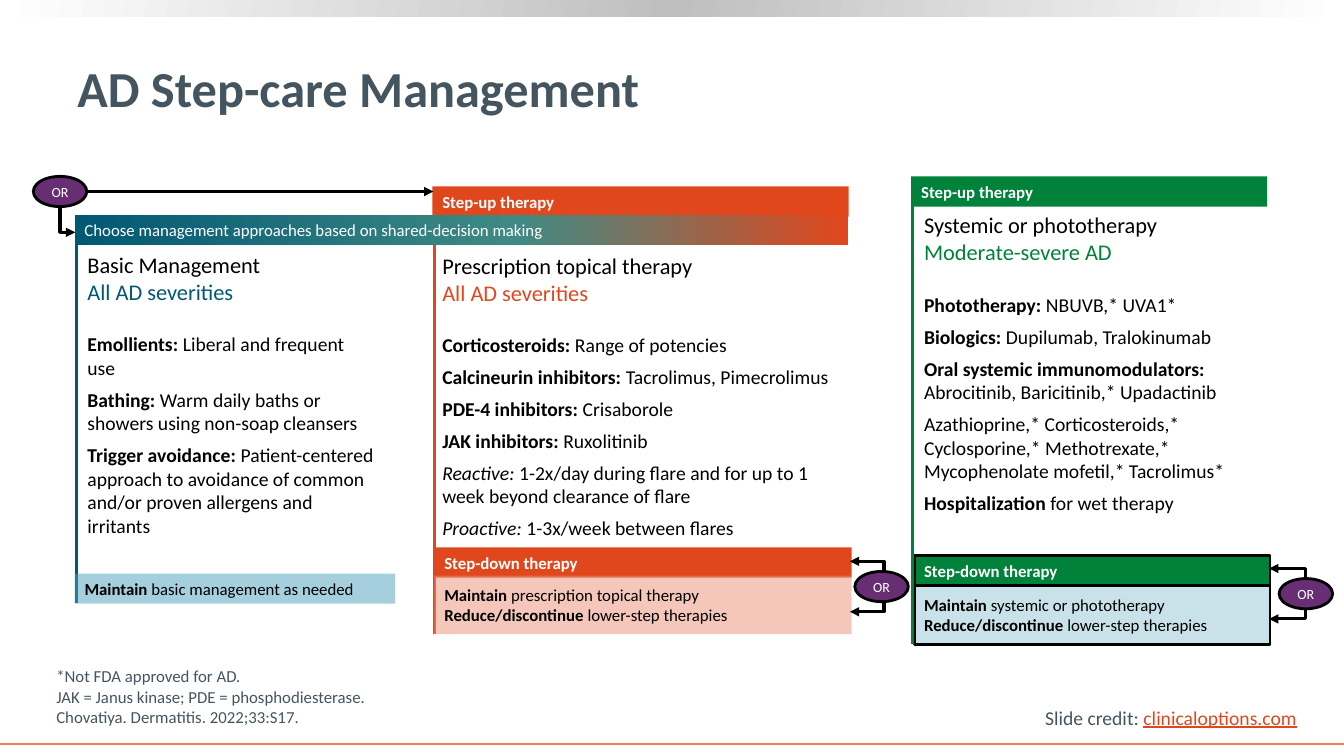
from copy import deepcopy
from dataclasses import dataclass

from pptx import Presentation
from pptx.dml.color import RGBColor
from pptx.enum.shapes import MSO_CONNECTOR as Link, MSO_SHAPE as Preset
from pptx.enum.text import MSO_ANCHOR as Anchor, PP_ALIGN as Align
from pptx.oxml.ns import qn
from pptx.oxml.xmlchemy import OxmlElement
from pptx.util import Pt

COLORS = {
    "white": "FFFFFF", "black": "000000", "silver": "BFBFBF", "slate": "455560",
    "orange": "E1471D", "coral": "F47D55", "pink": "ED9077", "green": "00823B",
    "navy": "015873", "teal": "3F8A84", "sky": "4DA1BB", "ice": "94C7D6",
    "purple": "682E74",
}
BAR_HEIGHT = 21.6
NOTE_HEIGHT = 41.8
HEADING_GAP = 19.5


@dataclass(frozen=True)
class Run:
    text: str
    color: str = "black"
    bold: bool = False
    italic: bool = False
    underline: bool = False
    size: float = 12


@dataclass(frozen=True)
class Box:
    left: float
    top: float
    width: float
    height: float


@dataclass(frozen=True)
class Column:
    box: Box
    heading: str
    severity: str
    color: str
    items: list[list[Run]]


@dataclass(frozen=True)
class Loop:
    left: float
    top: float
    width: float
    badge: Box


def rgb(name: str) -> RGBColor:
    return RGBColor.from_string(COLORS[name])


def item(label: str, text: str, size: float = 14, italic: bool = False) -> list[Run]:
    return [Run(label, bold=not italic, italic=italic, size=size), Run(text, size=size)]


def place(box: Box) -> tuple:
    return Pt(box.left), Pt(box.top), Pt(box.width), Pt(box.height)


def write(frame, paragraphs: list[list[Run]], **formats) -> None:
    """Fill a text frame; a run that starts with a newline follows a line break."""
    for name, value in ({"word_wrap": True} | formats).items():
        setattr(frame, name, value)
    for index, runs in enumerate(paragraphs):
        paragraph = frame.paragraphs[0] if index == 0 else frame.add_paragraph()
        paragraph.alignment = Align.LEFT
        for part in runs:
            if part.text.startswith("\n"):
                paragraph.add_line_break()
            run = paragraph.add_run()
            run.text = part.text.lstrip("\n")
            font_values = {"name": "Calibri", "size": Pt(part.size), "bold": part.bold,
                           "italic": part.italic, "underline": part.underline}
            for name, value in font_values.items():
                setattr(run.font, name, value)
            run.font.color.rgb = rgb(part.color)


def add_text(slide, box: Box, paragraphs: list[list[Run]], **formats):
    frame = slide.shapes.add_textbox(*place(box)).text_frame
    write(frame, paragraphs, **formats)
    return frame


def add_bar(slide, box: Box, fill: str, paragraphs: list[list[Run]], outlined: bool = False,
            opacity: int = 100, preset=Preset.RECTANGLE):
    shape = slide.shapes.add_shape(preset, *place(box))
    shape.shadow.inherit = False
    shape.fill.solid()
    shape.fill.fore_color.rgb = rgb(fill)
    if opacity < 100:
        alpha = OxmlElement("a:alpha")
        alpha.set("val", str(opacity * 1000))
        shape._element.spPr.find(".//" + qn("a:srgbClr")).append(alpha)
    if outlined:
        shape.line.color.rgb = rgb("black")
        shape.line.width = Pt(2)
    else:
        shape.line.fill.background()
    write(shape.text_frame, paragraphs, vertical_anchor=Anchor.MIDDLE)
    return shape


def set_gradient(shape, stops: list[tuple[float, str]], angle: float) -> None:
    shape.fill.gradient()
    shape.fill.gradient_angle = angle
    stop_list = shape._element.spPr.find(".//" + qn("a:gsLst"))
    stop_list.append(deepcopy(stop_list[0]))
    for stop, (position, color) in zip(shape.fill.gradient_stops, stops):
        stop.position = position
        stop.color.rgb = rgb(color)


def style_line(shape, color: str, width: float = 2.25, arrows: tuple[str, ...] = ()) -> None:
    shape.line.color.rgb = rgb(color)
    shape.line.width = Pt(width)
    for end in arrows:
        arrow = OxmlElement(f"a:{end}")
        arrow.set("type", "triangle")
        shape.line._get_or_add_ln().append(arrow)


def add_line(slide, x1: float, y1: float, x2: float, y2: float, color: str,
             width: float = 2.25, arrows: tuple[str, ...] = (), kind=Link.STRAIGHT):
    line = slide.shapes.add_connector(kind, Pt(x1), Pt(y1), Pt(x2), Pt(y2))
    style_line(line, color, width, arrows)
    line._element.spPr.append(OxmlElement("a:effectLst"))
    return line


def add_badge(slide, box: Box) -> None:
    badge = add_bar(slide, box, "purple", [[Run("OR", "white", size=10)]],
                    outlined=True, preset=Preset.OVAL)
    frame = badge.text_frame
    frame.margin_left = frame.margin_right = 0
    frame.paragraphs[0].alignment = Align.CENTER


def add_loop(slide, loop: Loop) -> None:
    right, bottom = loop.left + loop.width, loop.top + 36
    builder = slide.shapes.build_freeform(Pt(loop.left), Pt(loop.top))
    builder.add_line_segments([(Pt(right), Pt(loop.top)), (Pt(right), Pt(bottom)),
                               (Pt(loop.left), Pt(bottom))], close=False)
    shape = builder.convert_to_shape()
    shape.shadow.inherit = False
    shape.fill.background()
    style_line(shape, "black", arrows=("headEnd", "tailEnd"))
    add_badge(slide, loop.badge)


def add_column(slide, column: Column) -> None:
    heading = [Run(column.heading, size=16), Run("\n" + column.severity, column.color, size=16)]
    frame = add_text(slide, column.box, [heading] + column.items)
    for paragraph in frame.paragraphs[1:]:
        paragraph.space_after = Pt(6)
    frame.paragraphs[1].space_before = Pt(HEADING_GAP)


def step_label(direction: str) -> list[list[Run]]:
    return [[Run(f"Step-{direction} therapy", "white", bold=True)]]


def maintain(text: str) -> list[list[Run]]:
    return [item("Maintain", f" {text}", 12),
            item("Reduce/discontinue ", "lower-step therapies", 12)]


COLUMNS = [
    Column(Box(55.4, 175.7, 218.9, 213), "Basic Management", "All AD severities", "navy", [
        item("Emollients: ", "Liberal and frequent use"),
        item("Bathing: ", "Warm daily baths or showers using non-soap cleansers"),
        item("Trigger avoidance: ", "Patient-centered approach to avoidance of common "
             "and/or proven allergens and irritants")]),
    Column(Box(308.9, 176.4, 290.2, 214.6), "Prescription topical therapy",
           "All AD severities", "orange", [
        item("Corticosteroids: ", "Range of potencies"),
        item("Calcineurin inhibitors: ", "Tacrolimus, Pimecrolimus"),
        item("PDE-4 inhibitors: ", "Crisaborole"),
        item("JAK inhibitors: ", "Ruxolitinib"),
        item("Reactive: ", "1-2x/day during flare and for up to 1 week beyond "
             "clearance of flare", italic=True),
        item("Proactive: ", "1-3x/week between flares", italic=True)]),
    Column(Box(653, 147.6, 241.9, 225.4), "Systemic or phototherapy",
           "Moderate-severe AD", "green", [
        item("Phototherapy: ", "NBUVB,* UVA1*"),
        item("Biologics: ", "Dupilumab, Tralokinumab"),
        item("Oral systemic immunomodulators: ", "Abrocitinib, Baricitinib,* Upadactinib"),
        [Run("Azathioprine,* Corticosteroids,* Cyclosporine,* Methotrexate,* "
             "Mycophenolate mofetil,* Tacrolimus*", size=14)],
        item("Hospitalization ", "for wet therapy")]),
]
LOOPS = [Loop(906.5, 406.1, 25.9, Box(913.7, 413.3, 38.2, BAR_HEIGHT)),
         Loop(607, 401, 24.5, Box(610.6, 408.2, 38.2, BAR_HEIGHT))]


def main() -> None:
    presentation = Presentation()
    presentation.slide_width, presentation.slide_height = Pt(960), Pt(540)
    slide = presentation.slides.add_slide(presentation.slide_layouts[6])

    # Page frame, title and notes
    band = add_bar(slide, Box(0, 0, 960, 11.5), "silver", [])
    set_gradient(band, [(0, "white"), (0.5, "silver"), (1, "white")], 170)
    add_line(slide, 0, 531.4, 960, 531.4, "coral", 1.5)
    add_text(slide, Box(739.4, 500.4, 195.8, 24.5), [[
        Run("Slide credit: ", "slate", size=14),
        Run("clinicaloptions.com", "orange", underline=True, size=14)]], word_wrap=False)
    add_text(slide, Box(48.2, 18.7, 856, 87),
             [[Run("AD Step-care Management", "slate", bold=True, size=36)]],
             vertical_anchor=Anchor.MIDDLE)
    add_text(slide, Box(33.1, 472.3, 783.4, 13), [[
        Run("*Not FDA approved for AD.", "slate"),
        Run("\nJAK = Janus kinase; PDE = phosphodiesterase.", "slate"),
        Run("\nChovatiya. Dermatitis. 2022;33:S17.", "slate")]])

    # Step-up bars, column texts and rules
    add_bar(slide, Box(308.9, 133.2, 297.4, BAR_HEIGHT), "orange", step_label("up"))
    add_bar(slide, Box(650.9, 126, 254.2, BAR_HEIGHT), "green", step_label("up"))
    for column in COLUMNS:
        add_column(slide, column)
    add_line(slide, 54.7, 162.7, 54.7, 430.6, "navy")
    add_line(slide, 310.3, 143.3, 310.3, 452.9, "orange")
    choice = add_bar(slide, Box(53.3, 153.4, 552.2, BAR_HEIGHT), "navy", [[
        Run("Choose management approaches based on shared-decision making", "white")]])
    set_gradient(choice, [(0, "navy"), (0.57, "teal"), (1, "orange")], 0)

    # Step-down bars and maintenance notes
    add_bar(slide, Box(53.3, 409.7, 229, BAR_HEIGHT), "sky",
            [item("Maintain", " basic management as needed", 12)], opacity=50)
    add_bar(slide, Box(310.3, 391, 298.1, BAR_HEIGHT), "orange", step_label("down"))
    add_bar(slide, Box(310.3, 411.1, 298.1, NOTE_HEIGHT), "pink",
            maintain("prescription topical therapy"), opacity=50)
    add_bar(slide, Box(653, 396.7, 254.2, BAR_HEIGHT), "green", step_label("down"), outlined=True)
    add_bar(slide, Box(653, 418.3, 254.2, NOTE_HEIGHT), "ice",
            maintain("systemic or phototherapy"), outlined=True, opacity=50)
    add_line(slide, 651.6, 139, 651.6, 460.1, "green")

    # Choice arrows and OR badges
    add_badge(slide, Box(23.8, 126, 38.2, BAR_HEIGHT))
    elbow = add_line(slide, 38.9, 151.2, 57.6, 162, "black", arrows=("tailEnd",), kind=Link.ELBOW)
    elbow._element.spPr.find(qn("a:prstGeom")).set("prst", "bentConnector2")
    for name, value in {"rot": "16200000", "flipH": "1"}.items():
        elbow._element.spPr.find(qn("a:xfrm")).set(name, value)
    add_line(slide, 61.9, 136.8, 309.6, 136.8, "black", arrows=("tailEnd",))
    for loop in LOOPS:
        add_loop(slide, loop)

    presentation.save("out.pptx")


if __name__ == "__main__":
    main()
